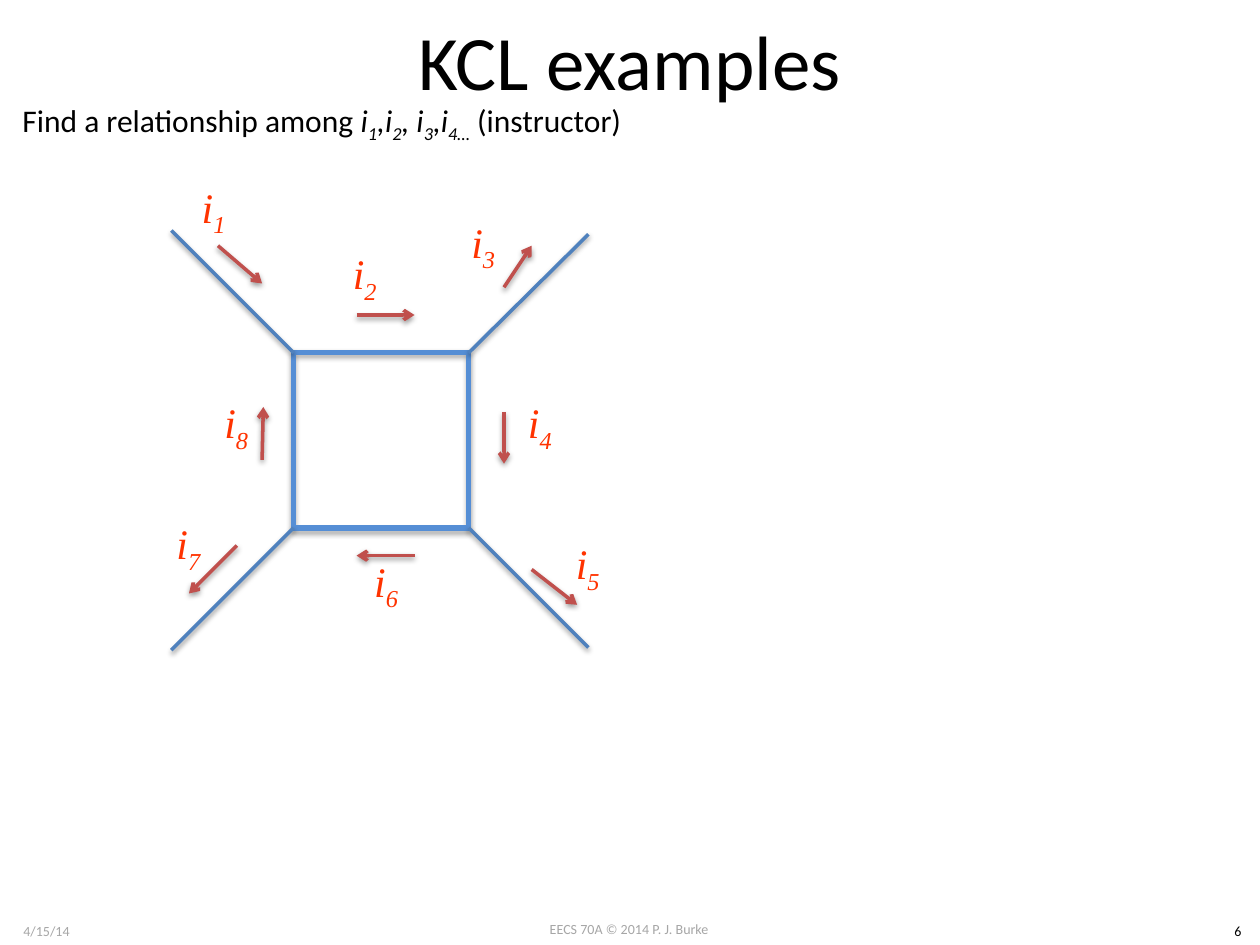
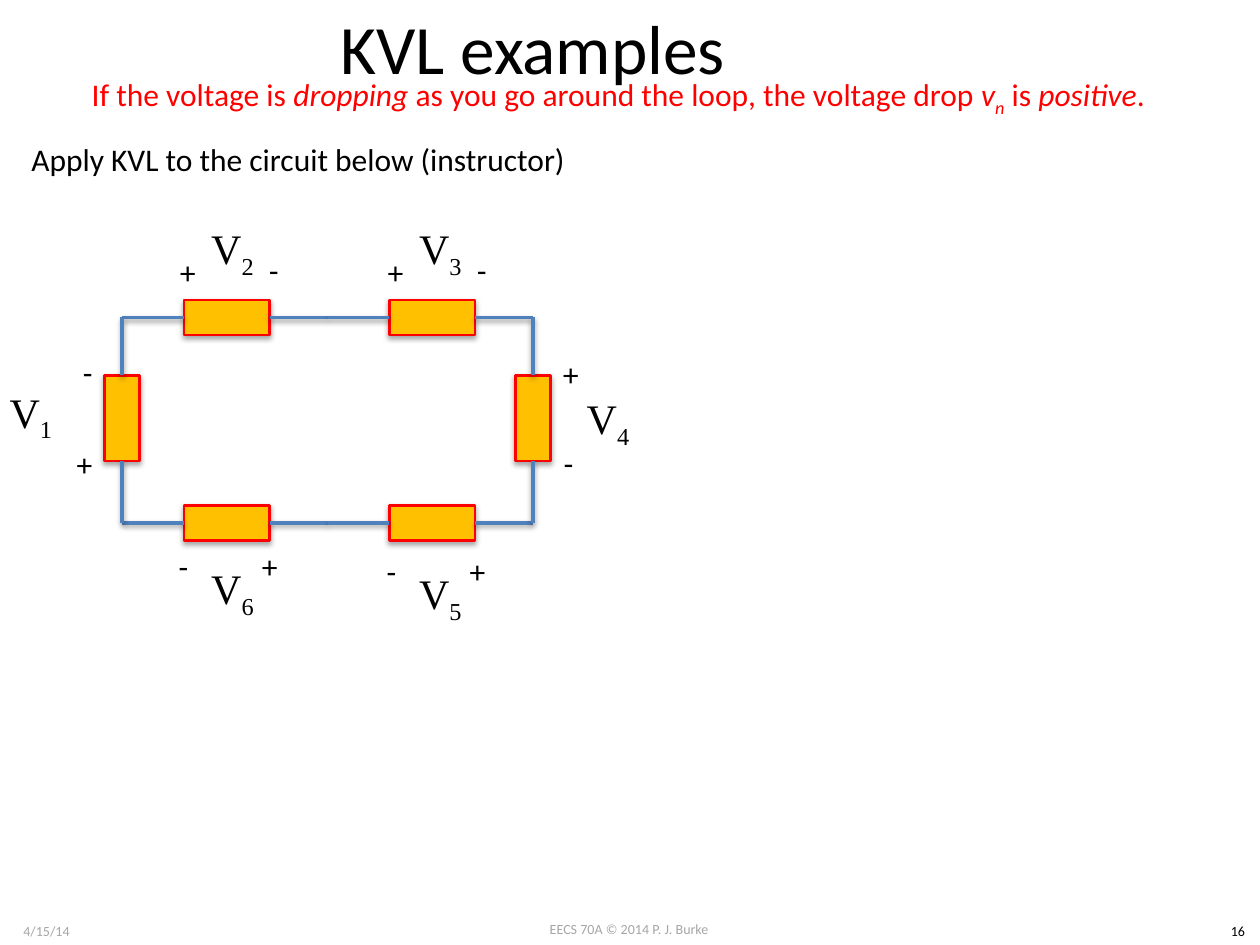
from dataclasses import dataclass

from lxml import etree
from pptx import Presentation
from pptx.dml.color import RGBColor
from pptx.enum.shapes import MSO_CONNECTOR, MSO_SHAPE
from pptx.enum.text import MSO_ANCHOR, MSO_AUTO_SIZE, PP_ALIGN
from pptx.oxml.ns import qn
from pptx.util import Inches, Pt

RECT = MSO_SHAPE.RECTANGLE
STRAIGHT = MSO_CONNECTOR.STRAIGHT
LEFT, CENTER = PP_ALIGN.LEFT, PP_ALIGN.CENTER
TOP, MIDDLE = MSO_ANCHOR.TOP, MSO_ANCHOR.MIDDLE
FIXED = MSO_AUTO_SIZE.NONE

SANS, SERIF = "Calibri", "Times New Roman"
COLORS = {
    "text": "000000", "footer": "A6A6A6", "wire": "4F81BD", "square": "558ED5",
    "arrow": "C0504D", "current": "FF3300", "rule": "FF0000", "resistor": "FFC000",
}

# The slide is a grid of 100 columns and 75 rows with square cells
SLIDE_W, SLIDE_H = Inches(10), Inches(7.5)
CELL = SLIDE_W / 100

Point = tuple[float, float]
Box = tuple[float, float, float, float]
Run = tuple[str, str]  # text, marks: i = italic, s = subscript


@dataclass(frozen=True)
class TextStyle:
    size: float
    color: str = "text"
    font: str = SANS
    align: PP_ALIGN = LEFT
    anchor: MSO_ANCHOR = TOP
    wrap: bool = False


BODY = TextStyle(18)
RULE = TextStyle(18, "rule")
FOOTER = TextStyle(8, "footer", align=CENTER, wrap=True)
PAGE_NUMBER = TextStyle(8, align=CENTER, wrap=True)
CURRENT = TextStyle(24, "current", SERIF, CENTER, MIDDLE, True)
VOLTAGE = TextStyle(24, "text", SERIF, CENTER, MIDDLE, True)


@dataclass(frozen=True)
class Current:
    number: int
    label: Point
    start: Point
    end: Point


@dataclass(frozen=True)
class Resistor:
    lead_start: Point
    vertical: bool = False


@dataclass(frozen=True)
class Voltage:
    number: int
    label: Point
    plus: Point
    minus: Point
    turned: bool = False


# KCL: a square node loop with four branches
SQUARE: Box = (23.3, 28, 13.9, 13.9)
BRANCH_ENDS = [(13.6, 18.3), (46.7, 18.6), (13.6, 51.6), (46.7, 51.4)]  # by rows
CURRENTS = [
    Current(1, (13.1, 13.6), (17.3, 19.5), (20.8, 22.5)),
    Current(2, (25.1, 18.9), (28.3, 25), (32.9, 25)),
    Current(3, (34.5, 16.4), (40, 22.8), (42.2, 19.5)),
    Current(4, (39, 30.7), (40, 32.7), (40, 36.8)),
    Current(5, (42.8, 41.9), (42.2, 45.2), (45.8, 48)),
    Current(6, (26.8, 43.3), (32.9, 44.1), (28.3, 44.1)),
    Current(7, (11.1, 40.3), (18.8, 43.3), (15, 47.1)),
    Current(8, (14.9, 30.7), (20.8, 36.5), (20.9, 32.3)),
]

# KVL: a loop two spans wide and one span high
SPAN = 16.3
LOOP_X = [9.7 + SPAN * i for i in range(3)]
LOOP_Y = [25.2 + SPAN * i for i in range(2)]
BODY_LENGTH, BODY_WIDTH = 6.8, 2.8
RESISTORS = [Resistor((x, y)) for y in LOOP_Y for x in LOOP_X[:2]]
RESISTORS += [Resistor((x, LOOP_Y[0]), True) for x in LOOP_X[::2]]
VOLTAGES = [
    Voltage(1, (-3.5, 29.3), (5.1, 34.8), (5.6, 27.5)),
    Voltage(2, (12.5, 16.3), (13.2, 20), (20.3, 20), True),
    Voltage(3, (29, 16.3), (29.7, 20), (36.8, 20), True),
    Voltage(4, (42.3, 29.8), (43.6, 28.1), (43.7, 35.3), True),
    Voltage(5, (29, 43.7), (36.3, 43.3), (29.7, 43.3)),
    Voltage(6, (12.5, 43.3), (19.8, 42.9), (13.2, 42.9)),
]


def grid(*cells: float) -> list[int]:
    return [round(c * CELL) for c in cells]


def rgb(name: str) -> RGBColor:
    return RGBColor.from_string(COLORS[name])


def fill_text(tf, runs: list[Run], style: TextStyle) -> None:
    tf.word_wrap = style.wrap
    tf.auto_size = FIXED
    tf.vertical_anchor = style.anchor
    p = tf.paragraphs[0]
    p.alignment = style.align
    for text, marks in runs:
        r = p.add_run()
        r.text = text
        r.font.name, r.font.size = style.font, Pt(style.size)
        r.font.color.rgb = rgb(style.color)
        r.font.italic = "i" in marks
        if "s" in marks:
            r.font._element.set("baseline", "-25000")


def add_text(s, box: Box, runs: list[Run], style: TextStyle, rotation: float = 0) -> None:
    sp = s.shapes.add_textbox(*grid(*box))
    sp.rotation = rotation
    fill_text(sp.text_frame, runs, style)


def add_shadow(sp, distance: float, opacity: int) -> None:
    """Cast a soft black shadow straight down."""
    effects = etree.SubElement(sp._element.spPr, qn("a:effectLst"))
    shadow = etree.SubElement(effects, qn("a:outerShdw"), blurRad=str(Pt(3.1)),
                              dist=str(Pt(distance)), dir="5400000", rotWithShape="0")
    color = etree.SubElement(shadow, qn("a:srgbClr"), val="000000")
    etree.SubElement(color, qn("a:alpha"), val=str(opacity * 1000))


def add_line(s, start: Point, end: Point, color: str = "wire", arrow: bool = False):
    line = s.shapes.add_connector(STRAIGHT, *grid(*start, *end))
    line.line.color.rgb = rgb(color)
    line.line.width = Pt(2)
    if arrow:
        etree.SubElement(line.line._get_or_add_ln(), qn("a:tailEnd"), type="arrow")
    add_shadow(line, 1.6, 38)
    return line


def add_rect(s, box: Box, line: str, width: float, fill: str | None = None):
    sp = s.shapes.add_shape(RECT, *grid(*box))
    if fill:
        sp.fill.solid()
        sp.fill.fore_color.rgb = rgb(fill)
    else:
        sp.fill.background()
    sp.line.color.rgb = rgb(line)
    sp.line.width = Pt(width)
    add_shadow(sp, 1.8, 35)
    return sp


def add_resistor(s, res: Resistor) -> None:
    """Draw a resistor and the two leads that fill its span of the loop."""
    x, y = res.lead_start
    if res.vertical:
        center, size = (x, y + 8), (BODY_WIDTH, BODY_LENGTH)
        lead_end, sides = (x, y + SPAN), (0, 2)
    else:
        center, size = (x + 8.3, y), (BODY_LENGTH, BODY_WIDTH)
        lead_end, sides = (x + SPAN, y), (1, 3)
    corner = [c - d / 2 for c, d in zip(center, size)]
    body = add_rect(s, (*corner, *size), "rule", 1.5, "resistor")
    for outer, side in zip((res.lead_start, lead_end), sides):
        add_line(s, outer, center).end_connect(body, side)


def add_slide(prs, title: str, title_box: Box, title_size: float, number: int):
    s = prs.slides.add_slide(prs.slide_layouts[5])
    sp = s.shapes.title
    sp.left, sp.top, sp.width, sp.height = grid(*title_box)
    fill_text(sp.text_frame, [(title, "")],
              TextStyle(title_size, align=CENTER, anchor=MIDDLE, wrap=True))
    # Footer row
    add_text(s, (38.3, 72.6, 23.3, 2.4), [("EECS 70A © 2014 P. J. Burke", "")], FOOTER)
    add_text(s, (0, 72.7, 7.4, 2.4), [("4/15/14", "")], FOOTER)
    add_text(s, (96.5, 72.7, 3.5, 2.4), [(str(number), "")], PAGE_NUMBER)
    return s


def build_kcl(prs) -> None:
    s = add_slide(prs, "KCL examples", (5, 0, 90, 9.5), 44, 6)
    add_text(s, (0.8, 7.5, 51.2, 4), [
        ("Find a relationship among ", ""), ("i", "i"), ("1", "is"), (",i", "i"),
        ("2", "is"), (", i", "i"), ("3", "is"), (",i", "i"), ("4…", "is"),
        (" (instructor)", "")], BODY)
    # Square and its branches
    add_rect(s, SQUARE, "square", 3)
    x, y, w, h = SQUARE
    corners = [(cx, cy) for cy in (y, y + h) for cx in (x, x + w)]
    for corner, end in zip(corners, BRANCH_ENDS):
        add_line(s, corner, end)
    # Current arrows and labels
    for c in CURRENTS:
        add_line(s, c.start, c.end, "arrow", arrow=True)
        add_text(s, (*c.label, 7.7, 6.1), [("i", "i"), (str(c.number), "is")], CURRENT)


def build_kvl(prs) -> None:
    s = add_slide(prs, "KVL examples", (8.3, 0, 68, 7.5), 39.6, 16)
    add_text(s, (6.3, 5.5, 86.7, 4), [
        ("If the voltage is ", ""), ("dropping", "i"),
        (" as you go around the loop, the voltage drop ", ""), ("v", "i"), ("n", "is"),
        (" is ", ""), ("positive", "i"), (".", "")], RULE)
    add_text(s, (1.5, 10.6, 44.9, 4),
             [("Apply KVL to the circuit below (instructor)", "")], BODY)
    # Circuit
    for res in RESISTORS:
        add_resistor(s, res)
    # Voltage labels and polarity signs
    for v in VOLTAGES:
        add_text(s, (*v.label, 11.9, 7.3), [("V", ""), (str(v.number), "s")], VOLTAGE)
        turn = 180 if v.turned else 0
        add_text(s, (*v.plus, 3.3, 4), [("+", "")], BODY, turn)
        add_text(s, (*v.minus, 2.8, 4), [("-", "")], BODY, turn)


def main() -> None:
    prs = Presentation()
    prs.slide_width, prs.slide_height = SLIDE_W, SLIDE_H
    build_kcl(prs)
    build_kvl(prs)
    prs.save("out.pptx")


if __name__ == "__main__":
    main()
